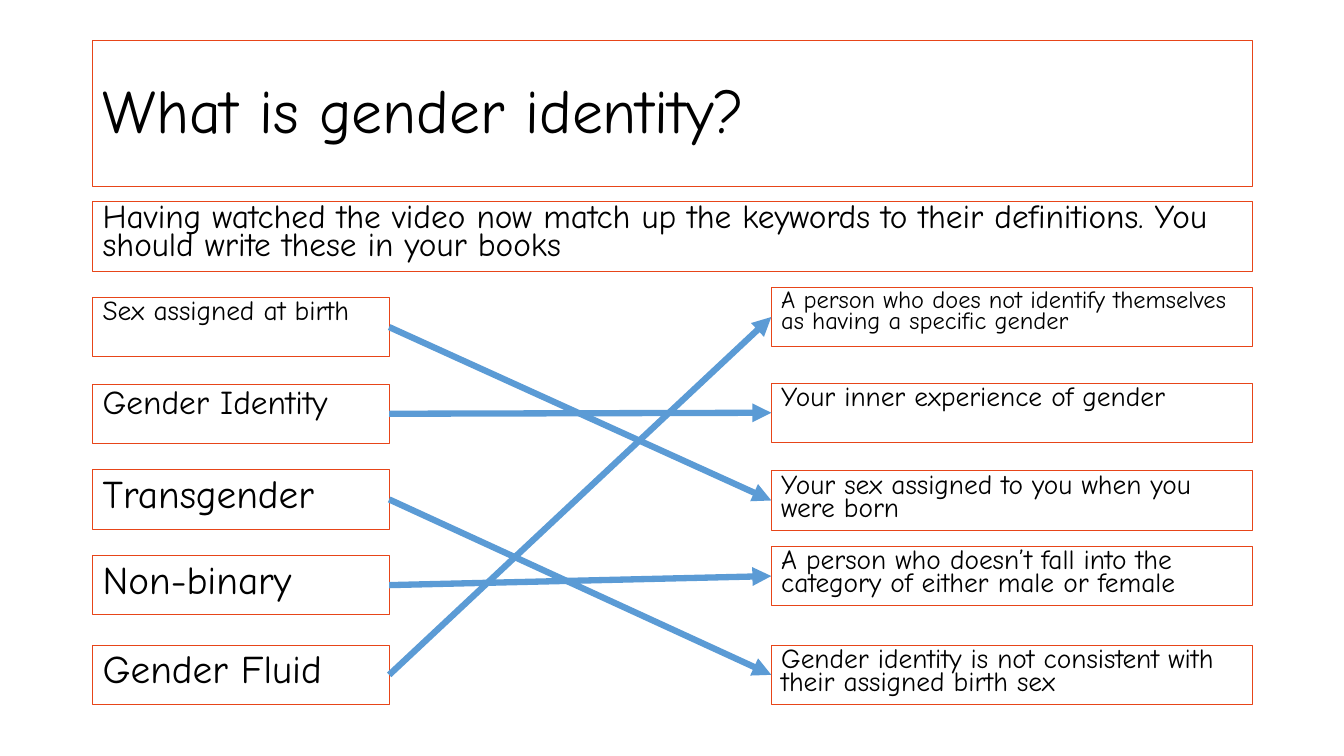
from pptx import Presentation
from pptx.dml.color import RGBColor
from pptx.enum.shapes import MSO_CONNECTOR, MSO_SHAPE
from pptx.enum.text import MSO_ANCHOR, PP_ALIGN
from pptx.oxml.ns import qn
from pptx.util import Inches, Pt
from lxml import etree

RECTANGLE = MSO_SHAPE.RECTANGLE
STRAIGHT = MSO_CONNECTOR.STRAIGHT
TOP, MIDDLE = MSO_ANCHOR.TOP, MSO_ANCHOR.MIDDLE
LEFT = PP_ALIGN.LEFT

FONT = "Comic Neue"
INK, BORDER, ARROW = "000000", "E74519", "5B9BD5"

TITLE = "What is gender identity?"
TASK = ("Having watched the video now match up the keywords to their definitions. "
        "You should write these in your books")
KEYWORDS = [
    ("Sex assigned at birth", 2.95, 19.6, 0.7),
    ("Gender Identity", 3.81, 23.8, 0.8),
    ("Transgender", 4.66, 28, 0.9),
    ("Non-binary", 5.51, 28, 0.9),
    ("Gender Fluid", 6.4, 28, 0.9),
]
DEFINITIONS = [
    ("A person who does not identify themselves as having a specific gender", 2.85, 17.5),
    ("Your inner experience of gender", 3.8, 19.6),
    ("Your sex assigned to you when you were born", 4.67, 19.6),
    ("A person who doesn’t fall into the category of either male or female", 5.42, 19.6),
    ("Gender identity is not consistent with their assigned birth sex", 6.4, 19.6),
]
MATCHES = {
    "Sex assigned at birth": 2,
    "Gender Identity": 1,
    "Transgender": 4,
    "Non-binary": 3,
    "Gender Fluid": 0,
}

MARGIN, FULL_WIDTH = 0.92, 11.5
KEYWORD_WIDTH, DEFINITION_WIDTH, CARD_HEIGHT = 2.94, 4.77, 0.59
DEFINITION_LEFT = MARGIN + FULL_WIDTH - DEFINITION_WIDTH
LEFT_SITE, RIGHT_SITE = 1, 3


def color(hex_value):
    return RGBColor.from_string(hex_value)


def add_card(slide, text, left, top, width, height, size, spacing, before=10, anchor=TOP):
    card = slide.shapes.add_shape(
        RECTANGLE, Inches(left), Inches(top), Inches(width), Inches(height))
    card.shadow.inherit = False
    card.fill.background()
    card.line.color.rgb = color(BORDER)
    card.line.width = Pt(0.75)
    frame = card.text_frame
    frame.word_wrap = True
    frame.vertical_anchor = anchor
    frame.text = text
    paragraph = frame.paragraphs[0]
    paragraph.alignment = LEFT
    paragraph.line_spacing = spacing
    paragraph.space_before = Pt(before)
    font = paragraph.runs[0].font
    font.name = FONT
    font.size = Pt(size)
    font.color.rgb = color(INK)
    return card


def add_arrow(slide, keyword, definition):
    arrow = slide.shapes.add_connector(STRAIGHT, 0, 0, 0, 0)
    arrow.begin_connect(keyword, RIGHT_SITE)
    arrow.end_connect(definition, LEFT_SITE)
    arrow.line.color.rgb = color(ARROW)
    arrow.line.width = Pt(4.5)
    etree.SubElement(arrow.line._get_or_add_ln(), qn("a:tailEnd"), type="triangle")
    etree.SubElement(arrow._element.spPr, qn("a:effectLst"))


def main():
    deck = Presentation()
    deck.slide_width, deck.slide_height = Inches(13.33), Inches(7.5)
    slide = deck.slides.add_slide(deck.slide_layouts[6])

    add_card(slide, TITLE, MARGIN, 0.4, FULL_WIDTH, 1.45, 44, 0.9, 0, MIDDLE)
    add_card(slide, TASK, MARGIN, 2, FULL_WIDTH, 0.69, 23.8, 0.7)

    keywords = {
        text: add_card(slide, text, MARGIN, top, KEYWORD_WIDTH, CARD_HEIGHT, size, spacing)
        for text, top, size, spacing in KEYWORDS
    }
    definitions = [
        add_card(slide, text, DEFINITION_LEFT, top, DEFINITION_WIDTH, CARD_HEIGHT, size, 0.7)
        for text, top, size in DEFINITIONS
    ]
    for keyword, match in MATCHES.items():
        add_arrow(slide, keywords[keyword], definitions[match])

    deck.save("out.pptx")


if __name__ == "__main__":
    main()
